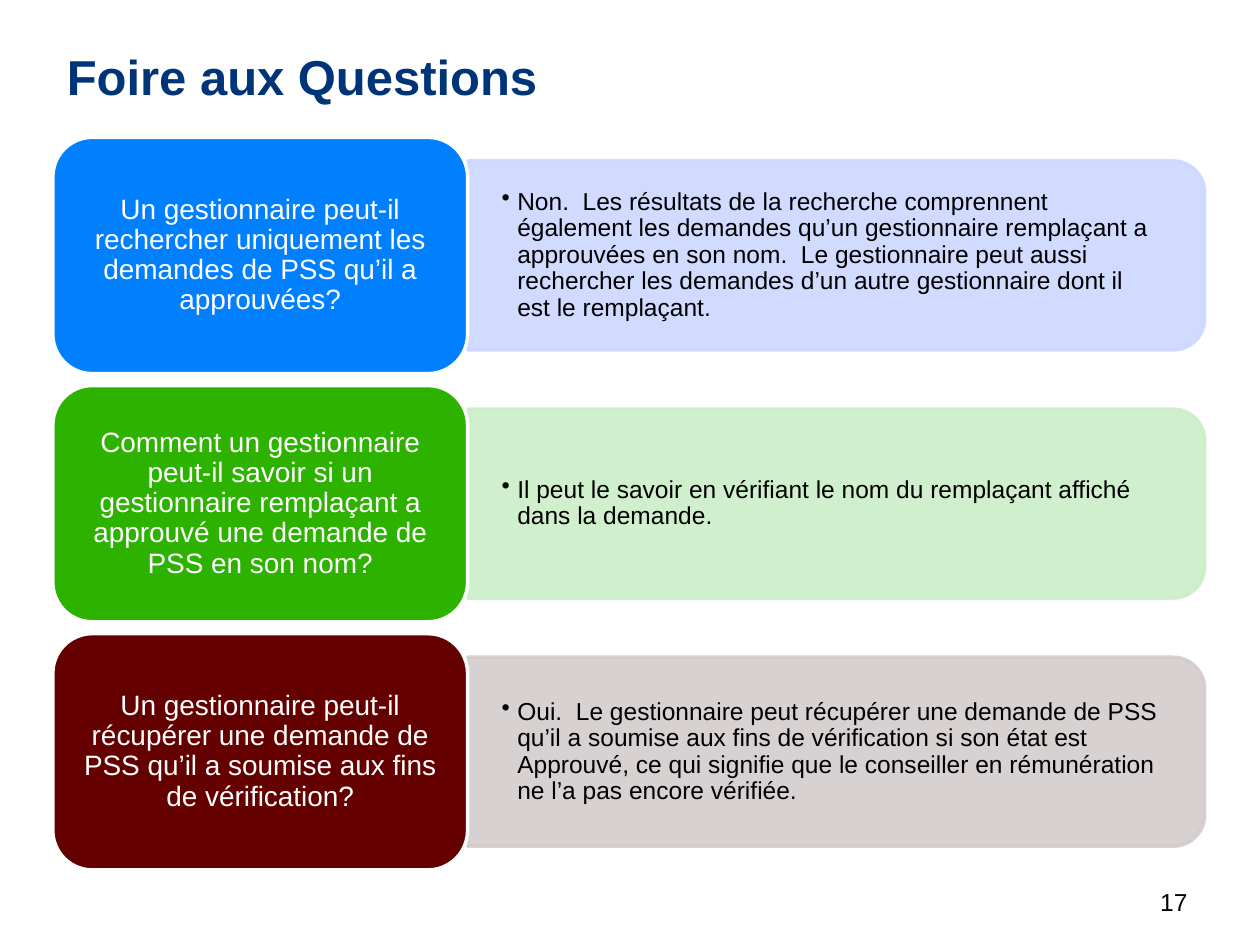
import pptx
import pptx.util
import pptx.dml.color
import pptx.enum.shapes
import pptx.enum.text
import pptx.oxml.ns
from lxml import etree

Pt = pptx.util.Pt
RGB = pptx.dml.color.RGBColor.from_string
KIND = pptx.enum.shapes.MSO_SHAPE
ALIGN = pptx.enum.text.PP_ALIGN
ANCHOR = pptx.enum.text.MSO_ANCHOR
qn = pptx.oxml.ns.qn

HUES = {
    "title": "003478", "text": "000000", "white": "FFFFFF",
    "blue": "0080FF", "sky": "CCD8FF",
    "green": "2DB200", "mint": "CBEEC7",
    "wine": "640000", "grey": "D3CCCC",
}

ROWS = [
    ("blue", "sky",
     "Un gestionnaire peut-il rechercher uniquement les demandes de PSS qu’il a approuvées?",
     "Non.  Les résultats de la recherche comprennent également les demandes qu’un "
     "gestionnaire remplaçant a approuvées en son nom.  Le gestionnaire peut aussi "
     "rechercher les demandes d’un autre gestionnaire dont il est le remplaçant."),
    ("green", "mint",
     "Comment un gestionnaire peut-il savoir si un gestionnaire remplaçant a approuvé "
     "une demande de PSS en son nom?",
     "Il peut le savoir en vérifiant le nom du remplaçant affiché dans la demande."),
    ("wine", "grey",
     "Un gestionnaire peut-il récupérer une demande de PSS qu’il a soumise aux fins "
     "de vérification?",
     "Oui.  Le gestionnaire peut récupérer une demande de PSS qu’il a soumise aux fins "
     "de vérification si son état est Approuvé, ce qui signifie que le conseiller en "
     "rémunération ne l’a pas encore vérifiée."),
]


def write(shape, text, size, hue, align, anchor, pads, bold=False, lead=1.0):
    """Fill a shape with one formatted paragraph; pads are (sides, ends)."""
    frame = shape.text_frame
    side, end = map(Pt, pads)
    form = {
        "word_wrap": True, "auto_size": pptx.enum.text.MSO_AUTO_SIZE.NONE,
        "vertical_anchor": anchor, "margin_left": side, "margin_right": side,
        "margin_top": end, "margin_bottom": end,
    }
    for name, value in form.items():
        setattr(frame, name, value)
    para = frame.paragraphs[0]
    para.alignment = align
    para.line_spacing = lead
    run = para.add_run()
    run.text = text
    for name, value in {"name": "Arial", "size": Pt(size), "bold": bold}.items():
        setattr(run.font, name, value)
    run.font.color.rgb = RGB(HUES[hue])
    return para


def paint(shape, fill, line):
    shape.shadow.inherit = False
    shape.fill.solid()
    shape.fill.fore_color.rgb = RGB(HUES[fill])
    shape.line.color.rgb = RGB(HUES[line])
    shape.line.width = Pt(2)


deck = pptx.Presentation()
deck.slide_width, deck.slide_height = Pt(720), Pt(540)
slide = deck.slides.add_slide(deck.slide_layouts[5])
shapes = slide.shapes

title = shapes.title
place = {"left": 31, "top": 21.6, "width": 657, "height": 43.2}
for name, value in place.items():
    setattr(title, name, Pt(value))
write(title, "Foire aux Questions", 28, "title", ALIGN.LEFT, ANCHOR.MIDDLE,
      (7.2, 3.6), bold=True)

left, top, wide, high, step = 30.2, 78.5, 237, 135, 141.8
edge = left + wide
span, thick = 421.2, 108

for i, (dark, pale, ask, reply) in enumerate(ROWS):
    y = top + i * step
    mid = y + high / 2

    # The bar stands upright, then turns a quarter so its round end faces right
    bar = shapes.add_shape(KIND.ROUND_2_SAME_RECTANGLE,
                           Pt(edge + (span - thick) / 2), Pt(mid - span / 2),
                           Pt(thick), Pt(span))
    bar.rotation = 90
    paint(bar, pale, pale)
    for tint in bar._element.spPr.iter(qn("a:srgbClr")):
        etree.SubElement(tint, qn("a:alpha"), val="90000")

    note = shapes.add_textbox(Pt(edge), Pt(mid - 48.6), Pt(415.6), Pt(97.2))
    para = write(note, reply, 14, "text", ALIGN.LEFT, ANCHOR.MIDDLE,
                 (19.4, 10), lead=0.9)
    props = para._p.get_or_add_pPr()
    props.set("marL", str(Pt(9)))
    props.set("indent", str(Pt(-9)))
    etree.SubElement(props, qn("a:buChar"), char="•")

    card = shapes.add_shape(KIND.ROUNDED_RECTANGLE, Pt(left), Pt(y), Pt(wide), Pt(high))
    paint(card, dark, "white")
    write(card, ask, 16, "white", ALIGN.CENTER, ANCHOR.MIDDLE, (4.8, 2.4), lead=0.9)

page = shapes.add_textbox(Pt(535.7), Pt(503.3), Pt(150), Pt(21))
write(page, "17", 14, "text", ALIGN.RIGHT, ANCHOR.TOP, (7.2, 3.6))

deck.save("out.pptx")
